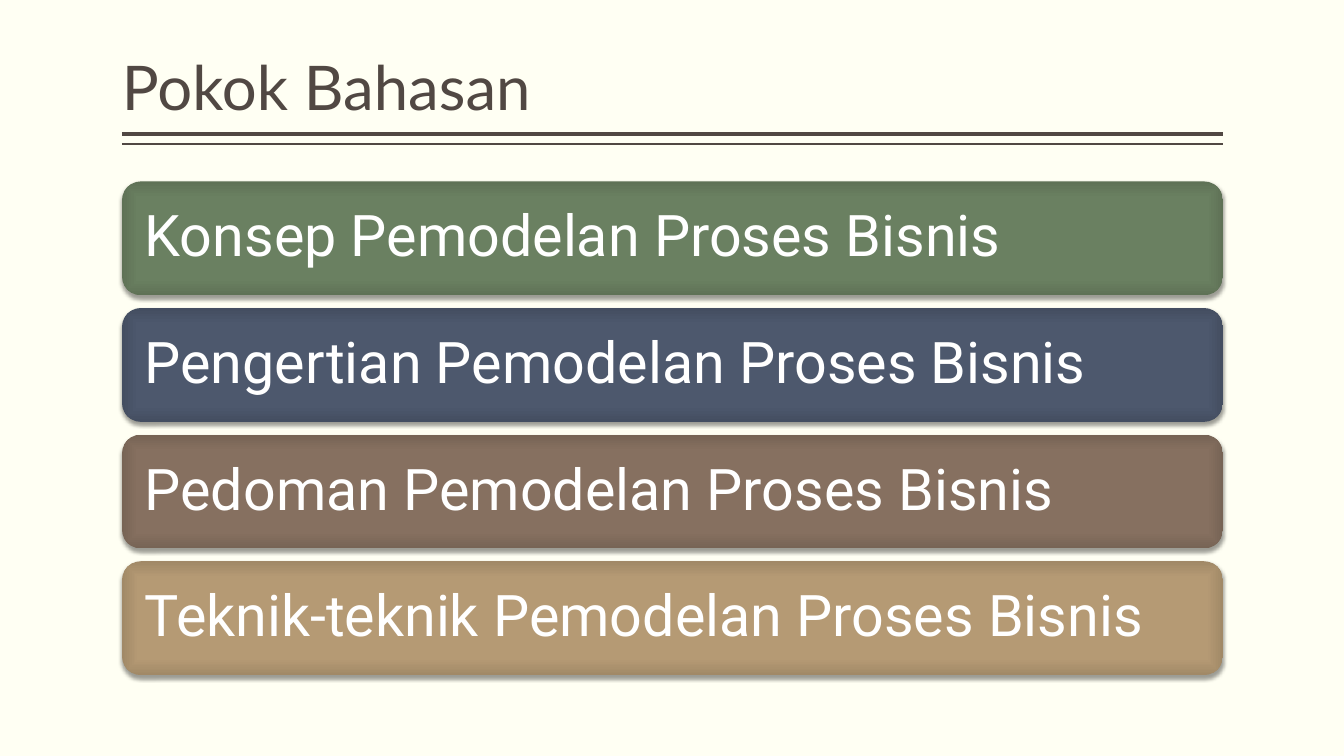
from dataclasses import dataclass

from lxml import etree
from pptx import Presentation
from pptx.dml.color import RGBColor
from pptx.enum.shapes import MSO_CONNECTOR, MSO_SHAPE
from pptx.enum.text import MSO_ANCHOR, MSO_AUTO_SIZE, PP_ALIGN
from pptx.oxml import parse_xml
from pptx.oxml.ns import nsdecls, qn
from pptx.util import Inches, Pt

STRAIGHT = MSO_CONNECTOR.STRAIGHT
ROUNDED = MSO_SHAPE.ROUNDED_RECTANGLE
MIDDLE, BOTTOM = MSO_ANCHOR.MIDDLE, MSO_ANCHOR.BOTTOM
LEFT = PP_ALIGN.LEFT
NO_AUTOFIT = MSO_AUTO_SIZE.NONE
TITLE_ONLY = 5


@dataclass(frozen=True)
class Theme:
    background: str = "FFFFF3"
    ink: str = "514843"
    bar_text: str = "FFFFFF"
    title_font: str = "Lato"
    bar_font: str = "Roboto"
    title_size: float = 44
    bar_size: float = 41


@dataclass(frozen=True)
class Grid:
    left: float = 1.21
    width: float = 10.92
    top: float = 1.8
    row: float = 1.13
    pitch: float = 1.256

    def row_top(self, index):
        return self.top + index * self.pitch


THEME = Theme()
GRID = Grid()
STOPS = (0, 71, 100)
RULES = ((1.33, 3), (1.43, 1))
TOPICS = (
    ("Konsep Pemodelan Proses Bisnis", ("6B8162", "6A8061", "5F7256")),
    ("Pengertian Pemodelan Proses Bisnis", ("4E596E", "4D586D", "444E61")),
    ("Pedoman Pemodelan Proses Bisnis", ("877161", "867060", "776455")),
    ("Teknik-teknik Pemodelan Proses Bisnis", ("B79B75", "B59A74", "A18967")),
)


def write(tf, text, font, size, color, anchor, insets):
    tf.word_wrap = True
    tf.auto_size = NO_AUTOFIT
    tf.vertical_anchor = anchor
    side, edge = (Inches(inset) for inset in insets)
    tf.margin_left = tf.margin_right = side
    tf.margin_top = tf.margin_bottom = edge
    p = tf.paragraphs[0]
    p.alignment = LEFT
    p.line_spacing = 0.9
    r = p.add_run()
    r.text = text
    r.font.name = font
    r.font.size = Pt(size)
    r.font.color.rgb = RGBColor.from_string(color)


def add_title(s, text):
    title = s.shapes.title
    title.left, title.top = Inches(GRID.left), Inches(0.08)
    title.width, title.height = Inches(GRID.width), Inches(1.2)
    write(title.text_frame, text, THEME.title_font, THEME.title_size,
          THEME.ink, BOTTOM, (0, 0.05))


def add_rule(s, y, weight):
    line = s.shapes.add_connector(
        STRAIGHT, Inches(GRID.left), Inches(y),
        Inches(GRID.left + GRID.width), Inches(y))
    line.line.color.rgb = RGBColor.from_string(THEME.ink)
    line.line.width = Pt(weight)
    etree.SubElement(line._element.spPr, qn("a:effectLst"))


def fill_from_center(sp, colors):
    stops = "".join(
        f'<a:gs pos="{pos * 1000}"><a:srgbClr val="{color}"/></a:gs>'
        for pos, color in zip(STOPS, colors))
    gradient = parse_xml(
        f'<a:gradFill {nsdecls("a")} rotWithShape="1"><a:gsLst>{stops}</a:gsLst>'
        '<a:path path="rect">'
        '<a:fillToRect l="50000" t="50000" r="50000" b="50000"/>'
        '</a:path></a:gradFill>')
    sp._element.spPr.find(qn("a:prstGeom")).addnext(gradient)


def add_shadow(sp):
    sp.shadow.inherit = False
    sp._element.spPr.find(qn("a:effectLst")).append(parse_xml(
        f'<a:outerShdw {nsdecls("a")} blurRad="{Pt(3.1)}" dist="{Pt(2)}" '
        'dir="5400000" algn="ctr" rotWithShape="0"><a:srgbClr val="000000">'
        '<a:alpha val="38000"/></a:srgbClr></a:outerShdw>'))


def add_topic(s, index, text, colors):
    sp = s.shapes.add_shape(
        ROUNDED, Inches(GRID.left), Inches(GRID.row_top(index)),
        Inches(GRID.width), Inches(GRID.row))
    fill_from_center(sp, colors)
    sp.line.fill.background()
    add_shadow(sp)
    write(sp.text_frame, text, THEME.bar_font, THEME.bar_size,
          THEME.bar_text, MIDDLE, (0.17, 0.17))


def main():
    prs = Presentation()
    prs.slide_width, prs.slide_height = Inches(13.33), Inches(7.5)
    s = prs.slides.add_slide(prs.slide_layouts[TITLE_ONLY])
    s.background.fill.solid()
    s.background.fill.fore_color.rgb = RGBColor.from_string(THEME.background)
    for y, weight in RULES:
        add_rule(s, y, weight)
    add_title(s, "Pokok Bahasan")
    for index, (text, colors) in enumerate(TOPICS):
        add_topic(s, index, text, colors)
    prs.save("out.pptx")


if __name__ == "__main__":
    main()
